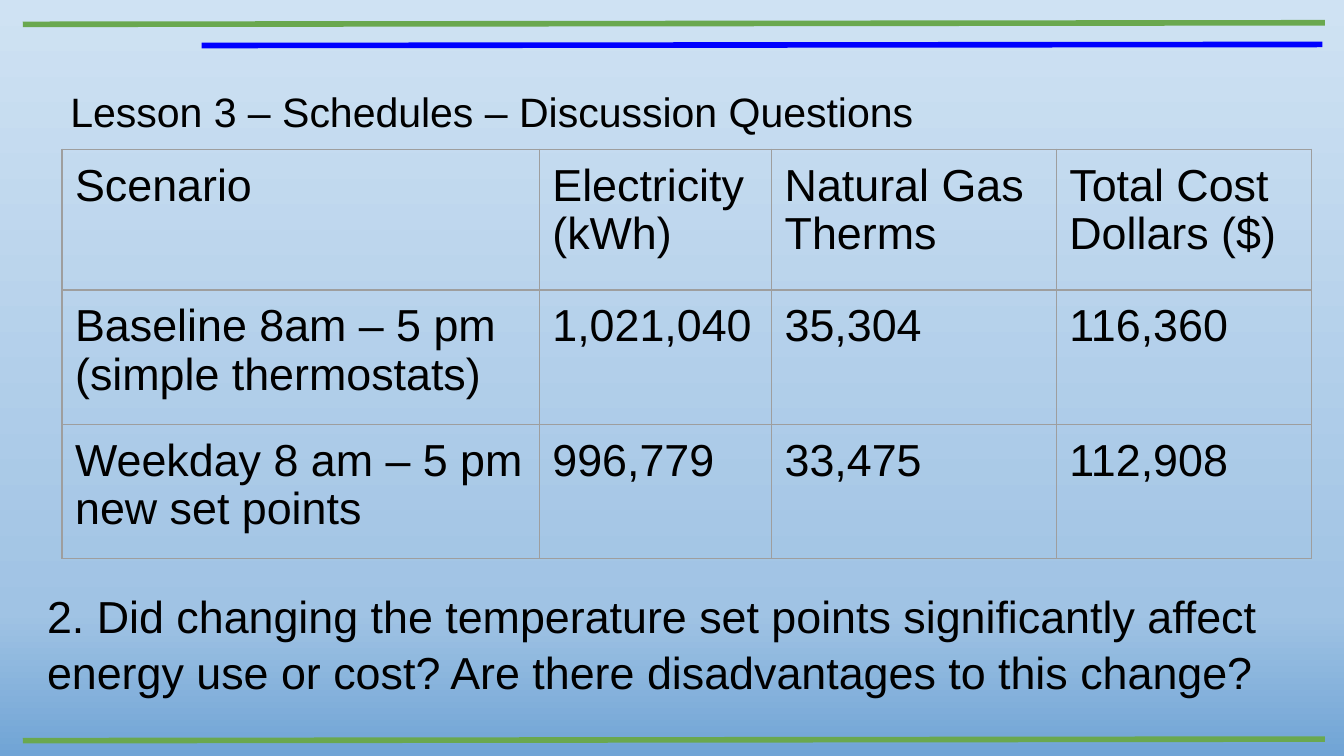
from copy import deepcopy

from lxml import etree
from pptx import Presentation
from pptx.dml.color import RGBColor
from pptx.enum.shapes import MSO_CONNECTOR
from pptx.oxml.ns import qn
from pptx.util import Cm, Pt

STRAIGHT = MSO_CONNECTOR.STRAIGHT
COLORS = {"text": "000000", "green": "6AA84F", "blue": "0000FF", "border": "9E9E9E"}
FONT = "Arial"
INSET = Cm(0.25)

BACKGROUND_STOPS = [(0, "CFE2F3"), (81, "A0C3E4"), (100, "70A4D5")]

# colour, start x, start y, end x, end y (cm)
RULES = [
    ("green", 0.43, 0.46, 25.04, 0.43),
    ("green", 0.43, 14.0, 25.04, 13.97),
    ("blue", 3.81, 0.86, 24.99, 0.84),
]

# text, size, left, top, width, height (cm)
TEXTS = [
    ("Lesson 3 – Schedules – Discussion Questions", 22, 1.08, 1.33, 23.74, 1.49),
    ("2. Did changing the temperature set points significantly affect "
     "energy use or cost? Are there disadvantages to this change?",
     24, 0.64, 10.82, 24.46, 2.57),
]
TEXT_SPACING = 1.05

SCENARIOS = [
    ["Scenario", "Electricity\n(kWh)", "Natural Gas\nTherms", "Total Cost\nDollars ($)"],
    ["Baseline 8am – 5 pm\n(simple thermostats)", "1,021,040", "35,304", "116,360"],
    ["Weekday 8 am – 5 pm\nnew set points", "996,779", "33,475", "112,908"],
]
TABLE_LEFT, TABLE_TOP = 1.17, 2.82
COLUMN_WIDTHS = [9.02, 4.39, 5.38, 4.83]
ROW_HEIGHTS = [2.66, 2.54, 2.54]
TABLE_SIZE, TABLE_SPACING = 24, 0.97


def rgb(name):
    return RGBColor.from_string(COLORS[name])


def paint_background(slide):
    fill = slide.background.fill
    fill.gradient()
    fill.gradient_angle = 270
    stops = fill.gradient_stops
    stop_list = slide.background._cSld.find(".//" + qn("a:gsLst"))
    stop_list.insert(1, deepcopy(stop_list[0]))
    for stop, (percent, color) in zip(fill.gradient_stops, BACKGROUND_STOPS):
        stop.position = percent / 100
        stop.color.rgb = RGBColor.from_string(color)


def format_text(frame, size, spacing):
    font_format = {"name": FONT, "size": Pt(size), "bold": False}
    for paragraph in frame.paragraphs:
        paragraph.line_spacing = spacing
        for run in paragraph.runs:
            for key, value in font_format.items():
                setattr(run.font, key, value)
            run.font.color.rgb = rgb("text")


def set_insets(target):
    for side in ("left", "right", "top", "bottom"):
        setattr(target, f"margin_{side}", INSET)


def add_rule(slide, color, *ends):
    rule = slide.shapes.add_connector(STRAIGHT, *map(Cm, ends))
    rule.line.color.rgb = rgb(color)
    rule.line.width = Pt(3)
    etree.SubElement(rule._element.spPr, qn("a:effectLst"))


def add_text(slide, text, size, *place):
    frame = slide.shapes.add_textbox(*map(Cm, place)).text_frame
    frame.word_wrap = True
    set_insets(frame)
    frame.text = text
    format_text(frame, size, TEXT_SPACING)


def add_borders(cell):
    properties = cell._tc.get_or_add_tcPr()
    for position, side in enumerate(("lnL", "lnR", "lnT", "lnB")):
        border = etree.Element(qn(f"a:{side}"), w=str(Pt(0.75)))
        fill = etree.SubElement(border, qn("a:solidFill"))
        etree.SubElement(fill, qn("a:srgbClr"), val=COLORS["border"])
        properties.insert(position, border)


def add_scenario_table(slide):
    table = slide.shapes.add_table(
        len(ROW_HEIGHTS), len(COLUMN_WIDTHS), Cm(TABLE_LEFT), Cm(TABLE_TOP),
        Cm(sum(COLUMN_WIDTHS)), Cm(sum(ROW_HEIGHTS))).table
    table.first_row = table.horz_banding = False
    for column, width in zip(table.columns, COLUMN_WIDTHS):
        column.width = Cm(width)
    for row, height, texts in zip(table.rows, ROW_HEIGHTS, SCENARIOS):
        row.height = Cm(height)
        for cell, text in zip(row.cells, texts):
            cell.text = text
            cell.fill.background()
            set_insets(cell)
            format_text(cell.text_frame, TABLE_SIZE, TABLE_SPACING)
            add_borders(cell)


def main():
    deck = Presentation()
    deck.slide_width, deck.slide_height = Cm(25.4), Cm(14.29)
    slide = deck.slides.add_slide(deck.slide_layouts[6])
    paint_background(slide)
    for rule in RULES:
        add_rule(slide, *rule)
    for text in TEXTS:
        add_text(slide, *text)
    add_scenario_table(slide)
    deck.save("out.pptx")


if __name__ == "__main__":
    main()
